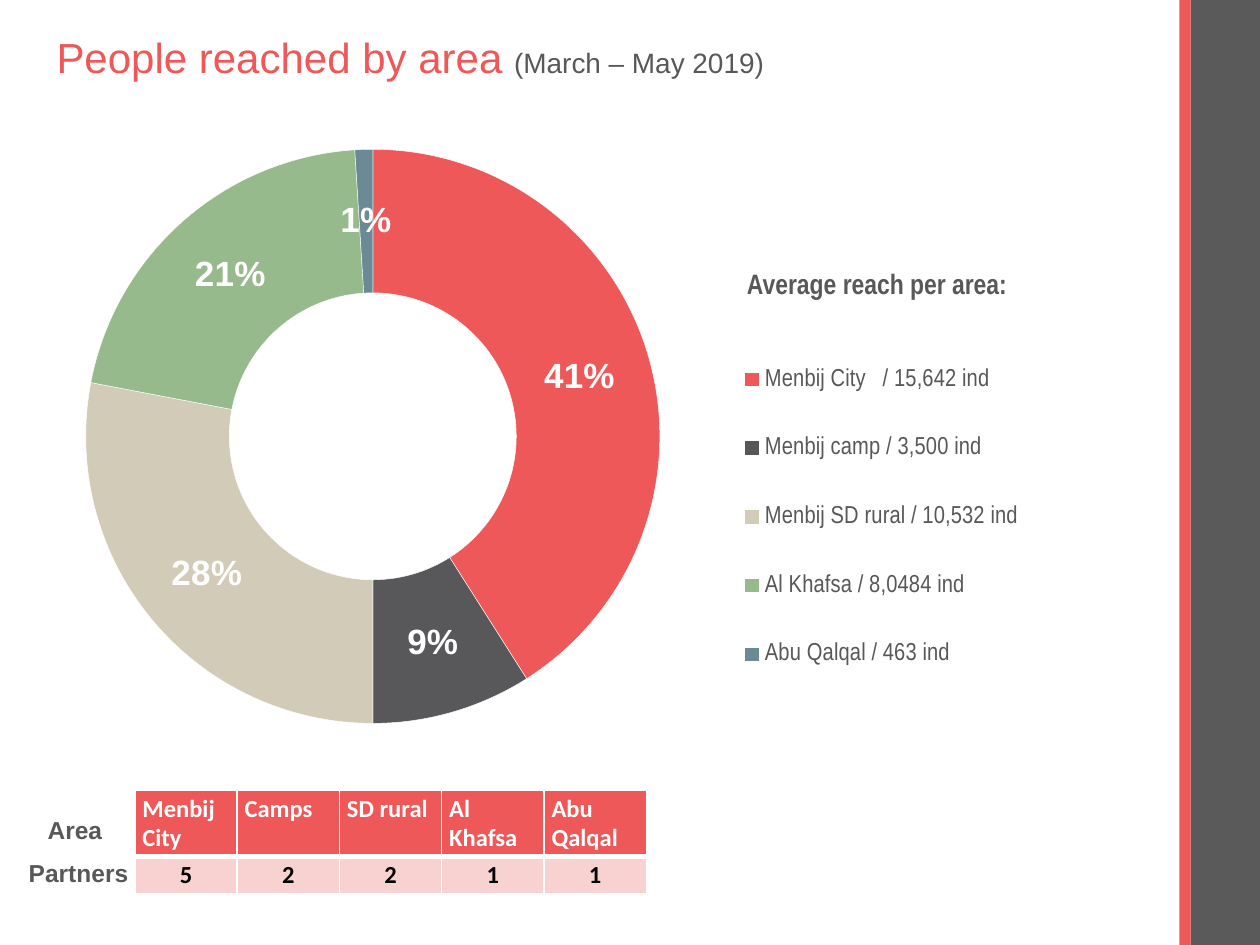
from lxml import etree
from pptx import Presentation
from pptx.chart.data import CategoryChartData
from pptx.dml.color import RGBColor
from pptx.enum import chart as charts, shapes, text
from pptx.oxml import parse_xml
from pptx.oxml.ns import nsdecls, qn
from pptx.util import Inches, Pt

RED = RGBColor(0xEE, 0x58, 0x59)
GRAY = RGBColor(0x58, 0x58, 0x5A)
BAR_GRAY = RGBColor(0x5A, 0x5A, 0x5A)
SAND = RGBColor(0xD2, 0xCB, 0xB8)
GREEN = RGBColor(0x96, 0xBA, 0x8C)
BLUE = RGBColor(0x6B, 0x8A, 0x95)
PINK = RGBColor(0xF8, 0xD1, 0xD1)
WHITE = RGBColor(0xFF, 0xFF, 0xFF)
BLACK = RGBColor(0, 0, 0)

REACH = [
    ("Menbij City   / 15,642 ind", 41, RED),
    ("Menbij camp / 3,500 ind", 9, GRAY),
    ("Menbij SD rural / 10,532 ind", 28, SAND),
    ("Al Khafsa / 8,0484 ind", 21, GREEN),
    ("Abu Qalqal / 463 ind", 1, BLUE),
]
PARTNERS = [
    ("Menbij City", "5"),
    ("Camps", "2"),
    ("SD rural", "2"),
    ("Al Khafsa", "1"),
    ("Abu Qalqal", "1"),
]


def style_font(font, size, color, name="Arial", bold=False):
    font.size = Pt(size)
    font.name = name
    font.bold = bold
    font.color.rgb = color


def write(paragraph, words, align=None, **style):
    run = paragraph.add_run()
    run.text = words
    style_font(run.font, **style)
    if align is not None:
        paragraph.alignment = align


def add_text_box(slide, box, wrap=False, anchor=text.MSO_ANCHOR.TOP):
    frame = slide.shapes.add_textbox(*map(Inches, box)).text_frame
    frame.word_wrap = wrap
    frame.vertical_anchor = anchor
    return frame.paragraphs[0]


def add_label(slide, box, words, **style):
    write(add_text_box(slide, box), words, color=GRAY, bold=True, **style)


def add_title(slide, box):
    heading = add_text_box(slide, box, wrap=True, anchor=text.MSO_ANCHOR.MIDDLE)
    heading.line_spacing = 0.9
    write(heading, "People reached by area ", size=24, color=RED)
    write(heading, "(March – May 2019)", size=16, color=GRAY)


def add_side_band(slide, box):
    left, top, width, height = box
    stripe = 0.09
    for x, band_width, color in (
        (left + stripe, width - stripe, BAR_GRAY),
        (left, stripe, RED),
    ):
        band = slide.shapes.add_shape(
            shapes.MSO_SHAPE.RECTANGLE, *map(Inches, (x, top, band_width, height))
        )
        band.shadow.inherit = False
        band.fill.solid()
        band.fill.fore_color.rgb = color
        band.line.fill.background()


def manual_layout(x, y, w, h, inner=False):
    target = '<c:layoutTarget val="inner"/>' if inner else ""
    return parse_xml(
        f'<c:layout {nsdecls("c")}><c:manualLayout>{target}'
        '<c:xMode val="edge"/><c:yMode val="edge"/>'
        f'<c:x val="{x}"/><c:y val="{y}"/><c:w val="{w}"/><c:h val="{h}"/>'
        "</c:manualLayout></c:layout>"
    )


def add_reach_chart(slide, box):
    data = CategoryChartData()
    data.categories = [area for area, _, _ in REACH]
    data.add_series("Series 1", [share for _, share, _ in REACH])
    chart = slide.shapes.add_chart(
        charts.XL_CHART_TYPE.DOUGHNUT, *map(Inches, box), data
    ).chart
    chart.has_title = False
    style_font(chart.font, 18, BLACK, name="Calibri")

    chart.has_legend = True
    legend = chart.legend
    legend.position = charts.XL_LEGEND_POSITION.RIGHT
    legend.include_in_layout = False
    style_font(legend.font, 14, GRAY, name="Arial Narrow")
    legend_xml = legend._element
    for layout in legend_xml.findall(qn("c:layout")):
        legend_xml.remove(layout)
    legend_xml.find(qn("c:legendPos")).addnext(manual_layout(0.64, 0.27, 0.27, 0.53))

    plot = chart.plots[0]
    plot_area = plot._element.getparent()
    for layout in plot_area.findall(qn("c:layout")):
        plot_area.remove(layout)
    plot_area.insert(0, manual_layout(0.043, 0.029, 0.528, 0.792, inner=True))
    plot._element.find(qn("c:holeSize")).set("val", "65")

    series = plot.series[0]
    for index, (_, _, color) in enumerate(REACH):
        slice_format = series.points[index].format
        slice_format.fill.solid()
        slice_format.fill.fore_color.rgb = color
        slice_format.line.color.rgb = WHITE
        slice_format.line.width = Pt(0.25)
    labels = series.data_labels
    labels.show_percentage = True
    labels.show_value = False
    labels.show_legend_key = False
    labels.number_format = "0%"
    labels.number_format_is_linked = False
    style_font(labels.font, 20, WHITE, bold=True)


def set_borders(cell, **widths):
    properties = cell._tc.get_or_add_tcPr()
    for side in "LRTB":
        line = etree.SubElement(
            properties, qn(f"a:ln{side}"), w=str(Pt(widths.get(side, 1)))
        )
        fill = etree.SubElement(line, qn("a:solidFill"))
        etree.SubElement(fill, qn("a:srgbClr"), val=str(WHITE))


def fill_cell(cell, words, background, color, align=None, **borders):
    set_borders(cell, **borders)
    cell.fill.solid()
    cell.fill.fore_color.rgb = background
    cell.margin_left = cell.margin_right = Inches(0.06)
    cell.margin_top = cell.margin_bottom = Inches(0.03)
    write(cell.text_frame.paragraphs[0], words, align=align,
          size=14, color=color, name="Calibri", bold=True)


def add_partner_table(slide, box):
    table = slide.shapes.add_table(2, len(PARTNERS), *map(Inches, box)).table
    table.horz_banding = False
    table.rows[0].height = Inches(0.52)
    table.rows[1].height = Inches(box[3] - 0.52)
    for column, (area, count) in enumerate(PARTNERS):
        table.columns[column].width = Inches(box[2] / len(PARTNERS))
        fill_cell(table.cell(0, column), area, RED, WHITE, B=3)
        fill_cell(table.cell(1, column), count, PINK, BLACK,
                  align=text.PP_ALIGN.CENTER, T=3)


def main():
    deck = Presentation()
    deck.slide_width, deck.slide_height = Inches(10), Inches(7.5)
    slide = deck.slides.add_slide(deck.slide_layouts[6])
    add_side_band(slide, (9.36, 0, 0.64, 7.5))
    add_title(slide, (0.35, -0.25, 8.62, 1.45))
    add_reach_chart(slide, (0.31, 0.99, 8.63, 5.82))
    add_label(slide, (5.83, 2.07, 2.28, 0.37), "Average reach per area:",
              size=16, name="Arial Narrow")
    add_partner_table(slide, (1.07, 6.27, 4.06, 0.82))
    add_label(slide, (0.13, 6.76, 1, 0.34), "Partners", size=14)
    add_label(slide, (0.28, 6.42, 0.64, 0.34), "Area", size=14)
    deck.save("out.pptx")


if __name__ == "__main__":
    main()
